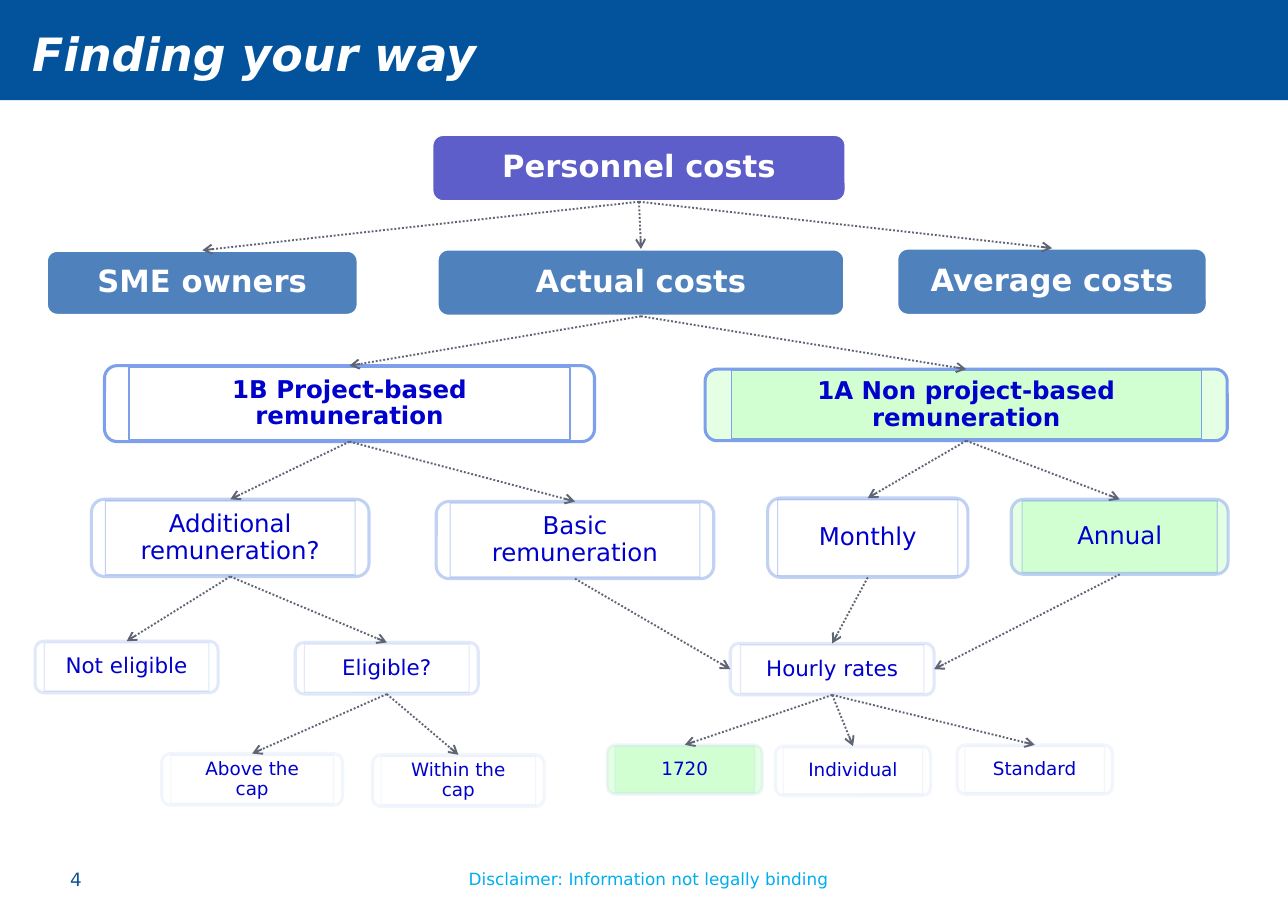
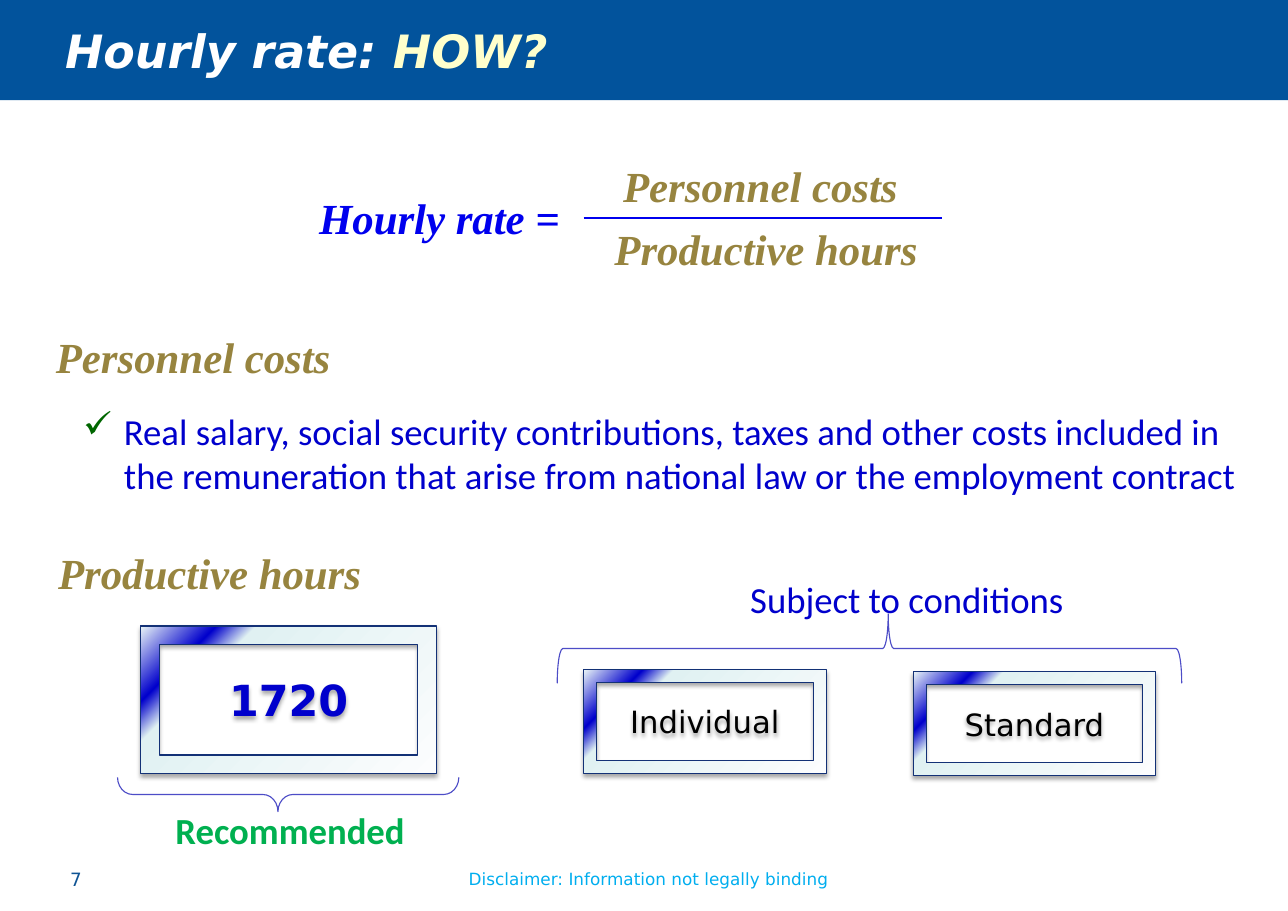
import dataclasses
import lxml.etree
import pptx
import pptx.dml.color
import pptx.enum.dml
import pptx.enum.shapes
import pptx.enum.text
import pptx.oxml.ns
import pptx.util

Cm = pptx.util.Cm
Pt = pptx.util.Pt
qn = pptx.oxml.ns.qn
Shapes = pptx.enum.shapes.MSO_SHAPE
Align = pptx.enum.text.PP_ALIGN
Anchor = pptx.enum.text.MSO_ANCHOR


@dataclasses.dataclass(frozen=True)
class Style:
    size: int
    color: str
    name: str = "DejaVu Sans"
    bold: bool = False
    italic: bool = False


@dataclasses.dataclass(frozen=True)
class Level:
    text: Style
    opacity: int = 100


@dataclasses.dataclass(frozen=True)
class Theme:
    width: float = 29.7
    height: float = 21.0
    band_height: float = 2.31
    band: str = "02539C"
    white: str = "FFFFFF"
    root: str = "5E5ECA"
    branch: str = "4F81BD"
    outline: str = "7E9FEA"
    chosen: str = "99FF99"
    chosen_opacity: int = 25
    arrow: str = "606576"
    fraction: str = "0000EE"
    check: str = "006600"
    frame_line: str = "133176"
    brace: str = "4D4DC7"
    bevel: tuple = ((0, "FCFDFE"), (74, "E0F1F2"), (83, "0000CC"), (100, "EBF6F7"))
    title: Style = Style(30, "FFFFFF", bold=True, italic=True)
    title_accent: Style = Style(30, "FFFFCC", bold=True, italic=True)
    number: Style = Style(12, "0F5494")
    footer: Style = Style(11, "00AEEF")
    heading: Style = Style(20, "FFFFFF", bold=True)
    formula: Style = Style(28, "0000EE", "Times New Roman", True, True)
    term: Style = Style(28, "97843F", "Times New Roman", True, True)
    body: Style = Style(24, "0000CC", "Calibri")
    advice: Style = Style(24, "00B050", "Calibri", True)
    key_figure: Style = Style(28, "0000CC", bold=True)
    option: Style = Style(20, "000000")
    levels: tuple = (
        Level(Style(16, "0000CC", bold=True)),
        Level(Style(16, "0000CC"), 48),
        Level(Style(14, "0000CC"), 24),
        Level(Style(12, "0000CC"), 10),
    )


THEME = Theme()
NODE_MARGINS = {
    "margin_left": Cm(0.43),
    "margin_right": Cm(0.43),
    "margin_top": Cm(0.2),
    "margin_bottom": Cm(0.2),
}
CENTERED = {"alignment": Align.CENTER}
NODE_PARAGRAPH = {**CENTERED, "line_spacing": 0.9}
TIGHT = {"line_spacing": 0.8}

HEADINGS = (
    ("Personnel costs", THEME.root, (9.96, 3.1, 9.55, 1.55)),
    ("SME owners", THEME.branch, (1.07, 5.77, 7.19, 1.5)),
    ("Actual costs", THEME.branch, (10.08, 5.74, 9.4, 1.55)),
    ("Average costs", THEME.branch, (20.68, 5.72, 7.16, 1.55)),
)
NODES = (
    ("1B Project-based remuneration", 0, (2.41, 8.43, 11.3, 1.75)),
    ("1A Non project-based remuneration", 0, (16.26, 8.51, 12.04, 1.65)),
    ("Additional remuneration?", 1, (2.11, 11.51, 6.4, 1.78)),
    ("Basic remuneration", 1, (10.06, 11.56, 6.4, 1.78)),
    ("Monthly", 1, (17.7, 11.48, 4.62, 1.83)),
    ("Annual", 1, (23.32, 11.51, 5, 1.73)),
    ("Not eligible", 2, (0.81, 14.78, 4.22, 1.19)),
    ("Eligible?", 2, (6.81, 14.81, 4.22, 1.19)),
    ("Hourly rates", 2, (16.84, 14.83, 4.7, 1.19)),
    ("Above the cap", 3, (3.73, 17.37, 4.17, 1.19)),
    ("Within the cap", 3, (8.59, 17.4, 3.96, 1.19)),
    ("1720", 3, (14, 17.17, 3.58, 1.14)),
    ("Individual", 3, (17.88, 17.2, 3.58, 1.14)),
    ("Standard", 3, (22.07, 17.17, 3.58, 1.14)),
)
CHOSEN = {"1A Non project-based remuneration", "Annual", "1720"}
BRANCHES = {
    "Personnel costs": ("SME owners", "Actual costs", "Average costs"),
    "Actual costs": ("1B Project-based remuneration", "1A Non project-based remuneration"),
    "1B Project-based remuneration": ("Additional remuneration?", "Basic remuneration"),
    "1A Non project-based remuneration": ("Monthly", "Annual"),
    "Additional remuneration?": ("Not eligible", "Eligible?"),
    "Eligible?": ("Above the cap", "Within the cap"),
    "Basic remuneration": ("Hourly rates",),
    "Monthly": ("Hourly rates",),
    "Annual": ("Hourly rates",),
    "Hourly rates": ("1720", "Individual", "Standard"),
}
SIDE_ENTRIES = {"Basic remuneration": 1, "Annual": 3}


def rgb(color):
    return pptx.dml.color.RGBColor.from_string(color)


def set_values(target, values):
    for name, value in values.items():
        setattr(target, name, value)


def add_element(parent, tag, **attributes):
    return lxml.etree.SubElement(parent, qn(tag), attributes)


def set_opacity(parent, opacity):
    if opacity < 100:
        color = parent.find(qn("a:solidFill")).find(qn("a:srgbClr"))
        add_element(color, "a:alpha", val=str(opacity * 1000))


def write_text(shape, runs, paragraph_values=None, frame_values=None):
    text_frame = shape.text_frame
    set_values(text_frame, {"word_wrap": True, **(frame_values or {})})
    paragraph = text_frame.paragraphs[0]
    set_values(paragraph, {"alignment": Align.LEFT, **(paragraph_values or {})})
    for text, style in runs:
        run = paragraph.add_run()
        run.text = text
        values = {name: getattr(style, name) for name in ("name", "bold", "italic")}
        set_values(run.font, {**values, "size": Pt(style.size)})
        run.font.color.rgb = rgb(style.color)
    return paragraph


def add_text(slide, text, style, box, paragraph_values=None, indent=0, hanging=0):
    shape = slide.shapes.add_textbox(*map(Cm, box))
    paragraph = write_text(shape, [(text, style)], paragraph_values)
    properties = paragraph._p.get_or_add_pPr()
    properties.set("marL", str(Cm(indent)))
    properties.set("indent", str(-Cm(hanging)))
    return paragraph


def add_check_mark(paragraph):
    properties = paragraph._p.get_or_add_pPr()
    color = add_element(properties, "a:buClr")
    add_element(color, "a:srgbClr", val=THEME.check)
    add_element(properties, "a:buChar", char="✓")


def add_box(slide, kind, box, fill=None, line=None, width=0.75, fill_opacity=100, line_opacity=100):
    shape = slide.shapes.add_shape(kind, *map(Cm, box))
    shape.shadow.inherit = False
    properties = shape._element.spPr
    if fill:
        shape.fill.solid()
        shape.fill.fore_color.rgb = rgb(fill)
        set_opacity(properties, fill_opacity)
    else:
        shape.fill.background()
    if line:
        shape.line.color.rgb = rgb(line)
        shape.line.width = Pt(width)
        set_opacity(properties.find(qn("a:ln")), line_opacity)
    else:
        shape.line.fill.background()
    return shape


def add_line(slide, start, end, color, width):
    connector = slide.shapes.add_connector(
        pptx.enum.shapes.MSO_CONNECTOR.STRAIGHT, *map(Cm, (*start, *end))
    )
    connector.line.color.rgb = rgb(color)
    connector.line.width = Pt(width)
    add_element(connector._element.spPr, "a:effectLst")
    return connector


def add_arrow(slide, parent, child, entry):
    connector = add_line(slide, (0, 0), (1, 1), THEME.arrow, 1.25)
    connector.line.dash_style = pptx.enum.dml.MSO_LINE.ROUND_DOT
    add_element(connector._element.spPr.find(qn("a:ln")), "a:tailEnd", type="arrow")
    connector.begin_connect(parent, 2)
    connector.end_connect(child, entry)


def add_heading(slide, text, color, box):
    shape = add_box(slide, Shapes.ROUNDED_RECTANGLE, box, color, THEME.white, 2)
    frame_values = {**NODE_MARGINS, "vertical_anchor": Anchor.MIDDLE}
    write_text(shape, [(text, THEME.heading)], NODE_PARAGRAPH, frame_values)
    return shape


def add_node(slide, text, level, box):
    left, top, width, height = box
    inset_x, inset_y = width * 0.05, 0.04
    inner_box = (left + inset_x, top + inset_y, width - 2 * inset_x, height - 2 * inset_y)
    chosen = text in CHOSEN
    colors = {"line": THEME.outline, "line_opacity": level.opacity}
    if chosen:
        colors.update(fill=THEME.chosen, fill_opacity=THEME.chosen_opacity)
    outer_colors = colors if chosen else {**colors, "fill": THEME.white}
    outer = add_box(slide, Shapes.ROUNDED_RECTANGLE, box, width=2, **outer_colors)
    inner = add_box(slide, Shapes.RECTANGLE, inner_box, **colors)
    frame_values = {**NODE_MARGINS, "vertical_anchor": Anchor.MIDDLE}
    write_text(inner, [(text, level.text)], NODE_PARAGRAPH, frame_values)
    return outer


def add_bevel(slide, text, style, box):
    shape = add_box(slide, Shapes.FRAME, box, line=THEME.frame_line)
    shape.fill.gradient()
    properties = shape._element.spPr
    gradient = properties.find(qn("a:gradFill"))
    gradient.clear()
    stops = add_element(gradient, "a:gsLst")
    for position, color in THEME.bevel:
        stop = add_element(stops, "a:gs", pos=str(position * 1000))
        add_element(stop, "a:srgbClr", val=color)
    add_element(gradient, "a:lin", ang=str(225 * 60000), scaled="0")
    shadow = add_element(
        properties.find(qn("a:effectLst")), "a:outerShdw", blurRad=str(Pt(3.1)),
        dist=str(Pt(1.8)), dir=str(90 * 60000), rotWithShape="0",
    )
    shadow_color = add_element(shadow, "a:srgbClr", val="000000")
    add_element(shadow_color, "a:alpha", val="35000")
    write_text(shape, [(text, style)], CENTERED, {"vertical_anchor": Anchor.MIDDLE})


def add_brace(slide, box, rotation, curl):
    brace = add_box(slide, Shapes.RIGHT_BRACE, box, line=THEME.brace)
    brace.rotation = rotation
    brace.adjustments[0] = curl
    brace.adjustments[1] = 0.53


def add_page(presentation, number, title_runs, title_left, title_drop=0):
    slide = presentation.slides.add_slide(presentation.slide_layouts[6])
    band = add_box(slide, Shapes.RECTANGLE, (0, 0, THEME.width, THEME.band_height), THEME.band)
    frame_values = {
        "margin_left": Cm(title_left),
        "margin_top": Cm(0.15 + title_drop),
        "margin_bottom": Cm(0.15),
        "vertical_anchor": Anchor.MIDDLE,
    }
    write_text(band, title_runs, frame_values=frame_values)
    add_text(slide, number, THEME.number, (1.37, 19.89, 2.08, 0.76))
    disclaimer = "Disclaimer: Information not legally binding"
    add_text(slide, disclaimer, THEME.footer, (10.26, 19.91, 9.4, 0.74), CENTERED)
    return slide


def build_decision_tree(presentation):
    slide = add_page(presentation, "4", [("Finding your way", THEME.title)], 0.74, 0.15)
    shapes = {text: add_heading(slide, text, color, box) for text, color, box in HEADINGS}
    for text, level, box in NODES:
        shapes[text] = add_node(slide, text, THEME.levels[level], box)
    for parent, children in BRANCHES.items():
        for child in children:
            add_arrow(slide, shapes[parent], shapes[child], SIDE_ENTRIES.get(parent, 0))


def build_hourly_rate(presentation):
    title_runs = [("Hourly rate: ", THEME.title), ("HOW?", THEME.title_accent)]
    slide = add_page(presentation, "7", title_runs, 1.5)
    for text, style, left, top in (
        ("Hourly rate =", THEME.formula, 7.11, 4.29),
        ("Personnel costs", THEME.term, 14.12, 3.56),
        ("Productive hours", THEME.term, 13.92, 5),
        ("Personnel costs", THEME.term, 1.04, 7.49),
        ("Productive hours", THEME.term, 1.09, 12.47),
    ):
        add_text(slide, text, style, (left, top, 9, 1.45))
    add_line(slide, (13.46, 5.03), (21.72, 5.03), THEME.fraction, 1.5)
    salary = (
        "Real salary, social security contributions, taxes and other costs included in "
        "the remuneration that arise from national law or the employment contract"
    )
    paragraph = add_text(
        slide, salary, THEME.body, (0.66, 9.3, 28.14, 2.31), indent=1.95, hanging=0.94
    )
    add_check_mark(paragraph)
    add_bevel(slide, "1720", THEME.key_figure, (3.25, 14.43, 6.81, 3.4))
    add_bevel(slide, "Individual", THEME.option, (13.46, 15.44, 5.59, 2.39))
    add_bevel(slide, "Standard", THEME.option, (21.06, 15.49, 5.59, 2.39))
    add_brace(slide, (19.25, 7.75, 1.6, 14.4), 270, 0.08)
    add_brace(slide, (6.25, 14.38, 0.79, 7.87), 90, 0.44)
    add_text(slide, "Subject to conditions", THEME.body, (16.03, 13.36, 11.96, 1.07), TIGHT, 1.02)
    add_text(
        slide, "Recommended", THEME.advice, (1.85, 18.69, 8.66, 1.09), {**TIGHT, **CENTERED}, 1.02
    )


def main():
    presentation = pptx.Presentation()
    presentation.slide_width = Cm(THEME.width)
    presentation.slide_height = Cm(THEME.height)
    build_decision_tree(presentation)
    build_hourly_rate(presentation)
    presentation.save("out.pptx")


if __name__ == "__main__":
    main()
